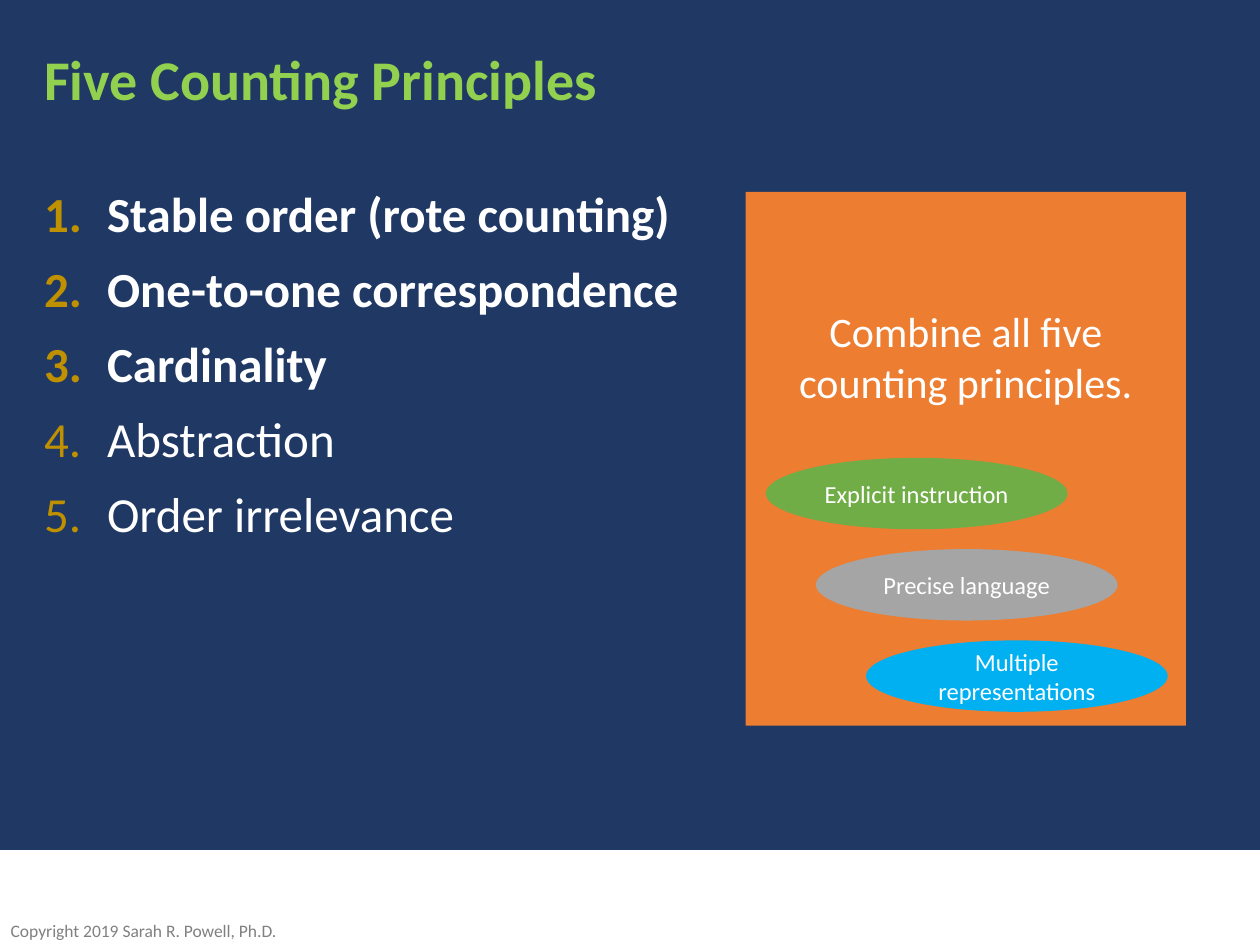
import pptx
import pptx.util
import pptx.dml.color
import pptx.enum.shapes
import pptx.enum.text
from dataclasses import dataclass
from lxml import etree

Cm, Pt = pptx.util.Cm, pptx.util.Pt
RGB = pptx.dml.color.RGBColor.from_string
SHAPE = pptx.enum.shapes.MSO_SHAPE
ALIGN = pptx.enum.text.PP_ALIGN
ANCHOR = pptx.enum.text.MSO_ANCHOR
FIT = pptx.enum.text.MSO_AUTO_SIZE


@dataclass(frozen=True)
class Theme:
    font: str = "Calibri"
    navy: str = "203864"
    white: str = "FFFFFF"
    lime: str = "92D050"
    gold: str = "BF9000"
    orange: str = "ED7D31"
    green: str = "70AD47"
    gray: str = "A5A5A5"
    blue: str = "00B0F0"
    muted: str = "808080"
    title_size: int = 32
    list_size: int = 28
    card_size: int = 24
    oval_size: int = 14
    footer_size: int = 10


THEME = Theme()
PRINCIPLES = [
    ("Stable order (rote counting)", True),
    ("One-to-one correspondence", True),
    ("Cardinality", True),
    ("Abstraction", False),
    ("Order irrelevance", False),
]
PRACTICES = [
    ("Explicit instruction", THEME.green),
    ("Precise language", THEME.gray),
    ("Multiple representations", THEME.blue),
]


def set_all(obj, values):
    for name, value in values.items():
        setattr(obj, name, value)


def add_run(p, text, size, color, bold=False):
    r = p.add_run()
    r.text = text
    set_all(r.font, {"name": THEME.font, "size": Pt(size), "bold": bold})
    r.font.color.rgb = RGB(color)


def set_frame(tf, **values):
    set_all(tf, {"word_wrap": True, "auto_size": FIT.NONE, **values})


def add_filled(shapes, kind, box, fill):
    sp = shapes.add_shape(kind, *map(Cm, box))
    sp.shadow.inherit = False
    sp.fill.solid()
    sp.fill.fore_color.rgb = RGB(fill)
    sp.line.fill.background()
    return sp


def add_label(sp, text, size):
    set_frame(sp.text_frame, vertical_anchor=ANCHOR.MIDDLE)
    p = sp.text_frame.paragraphs[0]
    p.alignment = ALIGN.CENTER
    add_run(p, text, size, THEME.white)


def number_paragraph(p, color):
    """Give the paragraph a hanging, coloured automatic number."""
    pPr = p._p.get_or_add_pPr()
    set_indent = {"marL": Cm(1.27), "indent": -Cm(1.27)}
    for name, value in set_indent.items():
        pPr.set(name, str(int(value)))
    ns = pptx.oxml.ns.qn
    clr = etree.SubElement(pPr, ns("a:buClr"))
    etree.SubElement(clr, ns("a:srgbClr"), val=color)
    etree.SubElement(pPr, ns("a:buAutoNum"), type="arabicPeriod")


def add_footer(s, box):
    x, y, w, h = box
    add_filled(s.shapes, SHAPE.RECTANGLE, box, THEME.white)
    tb = s.shapes.add_textbox(Cm(x), Cm(y + h - 0.51), Cm(5.82), Cm(0.43))
    set_frame(tb.text_frame, vertical_anchor=ANCHOR.MIDDLE,
              margin_left=0, margin_top=0, margin_bottom=0)
    p = tb.text_frame.paragraphs[0]
    p.alignment = ALIGN.RIGHT
    add_run(p, "Copyright 2019 Sarah R. Powell, Ph.D.",
            THEME.footer_size, THEME.muted)


def place_title(s, box, text):
    title = s.shapes.title
    set_all(title, dict(zip(("left", "top", "width", "height"), map(Cm, box))))
    title.fill.solid()
    title.fill.fore_color.rgb = RGB(THEME.navy)
    set_frame(title.text_frame, vertical_anchor=ANCHOR.TOP)
    p = title.text_frame.paragraphs[0]
    set_all(p, {"alignment": ALIGN.LEFT, "line_spacing": 1.1})
    add_run(p, text, THEME.title_size, THEME.lime, True)


def add_principles(s, box):
    tf = s.shapes.add_textbox(*map(Cm, box)).text_frame
    set_frame(tf)
    for i, (text, bold) in enumerate(PRINCIPLES):
        p = tf.add_paragraph() if i else tf.paragraphs[0]
        number_paragraph(p, THEME.gold)
        set_all(p, {"line_spacing": 1.1, "space_before": Pt(6 if i else 0)})
        add_run(p, text, THEME.list_size, THEME.white, bold)


def add_card(s, box):
    """Card with a message above a staircase of ovals."""
    x, y, _, _ = box
    group = s.shapes.add_group_shape()
    card = add_filled(group.shapes, SHAPE.RECTANGLE, box, THEME.orange)
    add_label(card, "Combine all five counting principles.", THEME.card_size)
    card.text_frame.margin_bottom = Cm(4.26)
    for i, (text, color) in enumerate(PRACTICES):
        oval_box = (x + 0.41 + 1.01 * i, y + 5.36 + 1.84 * i, 6.08, 1.44)
        oval = add_filled(group.shapes, SHAPE.OVAL, oval_box, color)
        add_label(oval, text, THEME.oval_size)


def main():
    prs = pptx.Presentation()
    set_all(prs, {"slide_width": Cm(25.4), "slide_height": Cm(19.05)})
    s = prs.slides.add_slide(prs.slide_layouts.get_by_name("Title Only"))
    s.background.fill.solid()
    s.background.fill.fore_color.rgb = RGB(THEME.navy)
    add_footer(s, (0, 17.14, 25.4, 1.91))
    place_title(s, (0.64, 0.64, 24.13, 2.03), "Five Counting Principles")
    add_principles(s, (0.64, 3.45, 24.13, 13.44))
    add_card(s, (15.03, 3.87, 8.88, 10.76))
    prs.save("out.pptx")


if __name__ == "__main__":
    main()
